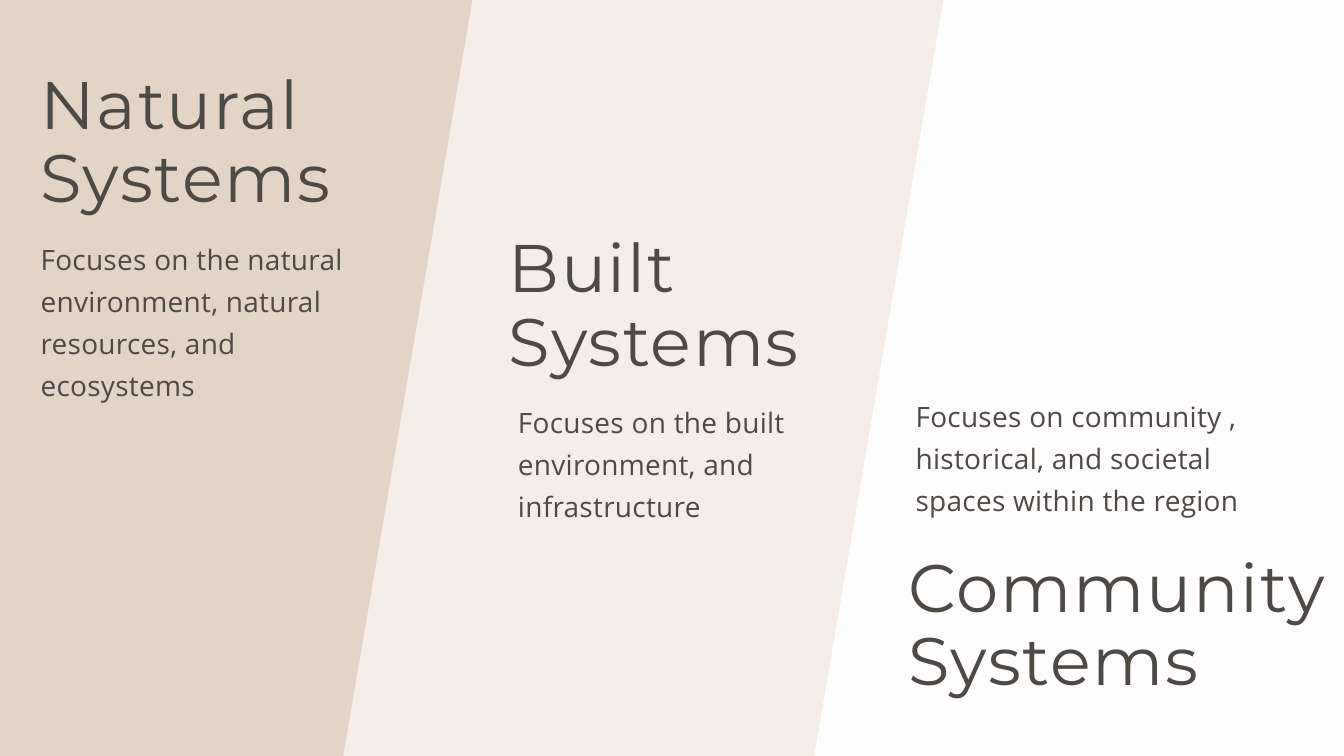
from dataclasses import dataclass

from pptx import Presentation
from pptx.dml.color import RGBColor as Rgb
from pptx.enum.shapes import MSO_SHAPE as Kind
from pptx.enum.text import MSO_AUTO_SIZE as Fit
from pptx.util import Pt

PX = 9525


@dataclass(frozen=True)
class Theme:
    sand: str = "E4D4C5"
    cream: str = "F5EEE8"
    white: str = "FFFDFD"
    ink: str = "4D4A46"
    head: tuple = ("Montserrat", 72, 79.2, 1.8)
    body: tuple = ("Open Sans", 30, 45, 0.3)


theme = Theme()

deck = Presentation()
deck.slide_width, deck.slide_height = 1920 * PX, 1080 * PX
slide = deck.slides.add_slide(deck.slide_layouts[6])
back = slide.background.fill
back.solid()
back.fore_color.rgb = Rgb.from_string(theme.sand)


def write(text, *, left, top, width, height, style, color=theme.ink):
    font, size, lead, track = style
    box = slide.shapes.add_textbox(left * PX, top * PX, width * PX, height * PX)
    frame = box.text_frame
    frame.word_wrap = True
    frame.auto_size = Fit.SHAPE_TO_FIT_TEXT
    frame.margin_left = frame.margin_right = 0
    frame.margin_top = frame.margin_bottom = 0
    frame.text = text
    for para in frame.paragraphs:
        para.line_spacing = Pt(lead)
        for run in para.runs:
            run.font.name = font
            run.font.size = Pt(size)
            run.font.color.rgb = Rgb.from_string(color)
            run.font._element.set("spc", str(round(track * 100)))


for left, top, color in ((586, -81, theme.cream), (1262, -100, theme.white)):
    band = slide.shapes.add_shape(
        Kind.RECTANGLE, left * PX, top * PX, 1068 * PX, 1295 * PX)
    band.rotation = 9.7
    band.shadow.inherit = False
    band.fill.solid()
    band.fill.fore_color.rgb = Rgb.from_string(color)
    band.line.fill.background()

heads = (
    ("Natural Systems", 58, 98),
    ("Built\nSystems", 727, 332),
    ("Community Systems", 1298, 788),
)
for text, left, top in heads:
    write(text, left=left, top=top, width=741, height=214, style=theme.head)

notes = (
    ("Focuses on the natural environment, natural resources, and ecosystems",
     58, 334, 237),
    ("Focuses on the built environment, and infrastructure", 740, 567, 177),
    ("Focuses on community , historical, and societal spaces within the region",
     1308, 559, 177),
)
for text, left, top, height in notes:
    write(text, left=left, top=top, width=484, height=height, style=theme.body)

deck.save("out.pptx")
